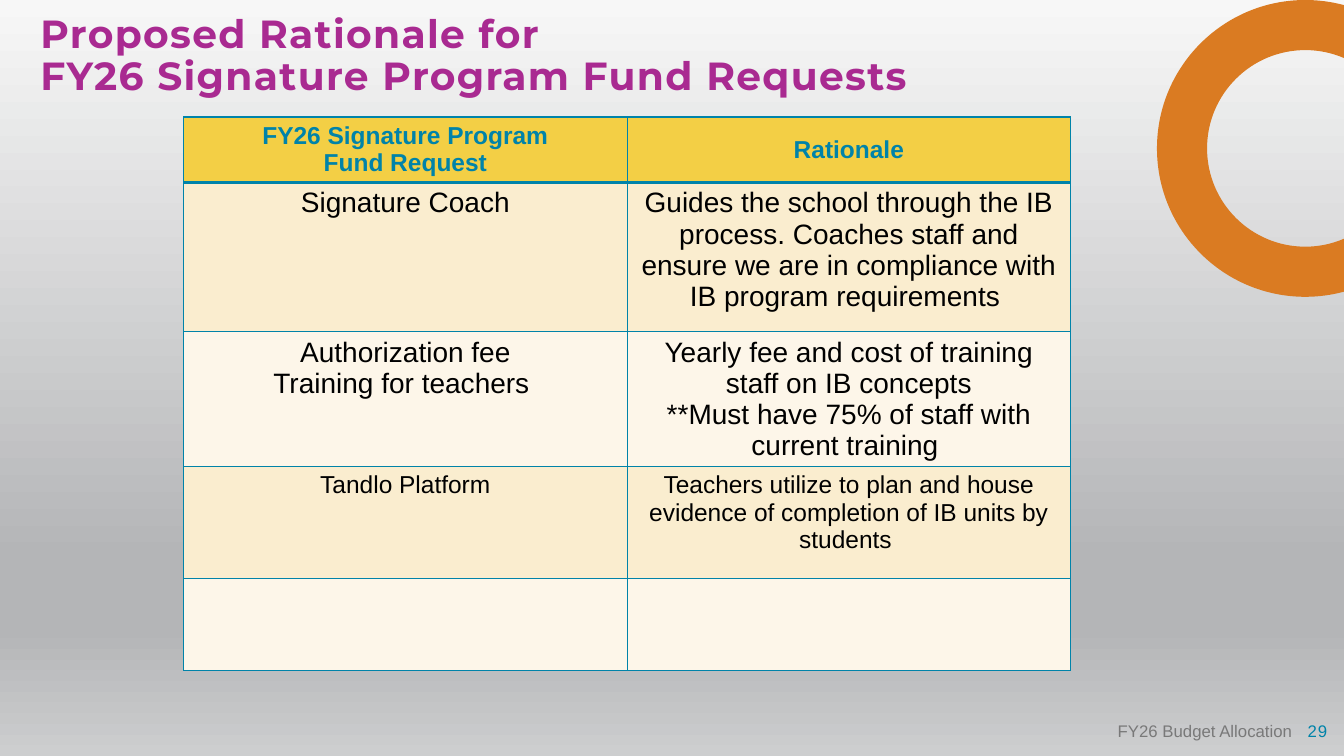
"""Build the signature program fund rationale slide."""
from copy import deepcopy
from dataclasses import dataclass
from math import acos, cos, pi, sin, tan

from lxml.etree import SubElement
from pptx import Presentation
from pptx.dml.color import RGBColor
from pptx.enum.text import MSO_ANCHOR as ANCHOR, MSO_AUTO_SIZE, PP_ALIGN as ALIGN
from pptx.oxml.ns import qn
from pptx.util import Pt


@dataclass(frozen=True)
class Theme:
    """Colours, fonts and type sizes."""
    purple: str = "A92A91"
    teal: str = "0083A9"
    orange: str = "DA7B22"
    gold: str = "F3CF45"
    sand: str = "FAEDCF"
    cream: str = "FDF6E9"
    black: str = "000000"
    gray: str = "797979"
    backdrop: tuple = ((0, "F7F7F7"), (74, "B4B5B7"), (83, "B4B5B7"), (100, "CDCECF"))
    heading: str = "Montserrat"
    body: str = "Arial"
    title_size: float = 28
    large: float = 20
    medium: float = 17.5
    small: float = 12


@dataclass(frozen=True)
class FundRow:
    """One table row: its two cell texts, height and look."""
    request: str
    rationale: str
    height: float
    fill: str
    size: float
    header: bool = False


@dataclass(frozen=True)
class FooterItem:
    """One right-aligned text in the footer."""
    text: str
    left: float
    width: float
    color: str
    inset: float
    spacing: float = 0


@dataclass(frozen=True)
class Ring:
    """Centre and radii of the ring."""
    cx: float = 932.4
    cy: float = 106
    outer: float = 106
    inner: float = 70.2


T = Theme()
WIDTH, HEIGHT = 960, 540
UNITS = 100
ROWS = (
    FundRow("FY26 Signature Program\nFund Request", "Rationale", 46.8, T.gold, T.medium, True),
    FundRow("Signature Coach",
            "Guides the school through the IB process. Coaches staff and ensure we are "
            "in compliance with IB program requirements ", 106.6, T.sand, T.large),
    FundRow("Authorization fee\nTraining for teachers ",
            "Yearly fee and cost of training staff on IB concepts\n"
            "**Must have 75% of staff with current training ", 86.4, T.cream, T.large),
    FundRow("Tandlo Platform",
            "Teachers utilize to plan and house evidence of completion of IB units by students ",
            79.9, T.sand, T.medium),
    FundRow("", "", 65.5, T.cream, T.medium),
)
FOOTER = (
    FooterItem("29", 732, 216, T.teal, 0, 0.5),
    FooterItem("FY26 Budget Allocation", 777, 153.2, T.gray, 7.2),
)


def rgb(color: str) -> RGBColor:
    """Turn a hex string into a colour."""
    return RGBColor.from_string(color)


def write(tf, text: str, *, size: float, color: str, font: str = T.body, bold: bool = False,
          align=ALIGN.LEFT, spacing: float = 0, line: float = 1.0) -> None:
    """Fill a text frame, one paragraph for each line of text."""
    for i, words in enumerate(text.split("\n")):
        p = tf.add_paragraph() if i else tf.paragraphs[0]
        p.text = words
        p.alignment = align
        p.line_spacing = line
        for r in p.runs:
            r.font.size, r.font.bold, r.font.name = Pt(size), bold, font
            r.font.color.rgb = rgb(color)
            if spacing:
                r.font._element.set("spc", str(round(spacing * 100)))
        for br in p._p.findall(qn("a:br")):
            br.insert(0, deepcopy(p.runs[0].font._element))


def set_frame(tf, inset: float, anchor) -> None:
    """Set wrapping, side insets and anchor of a text frame."""
    tf.word_wrap, tf.auto_size, tf.vertical_anchor = True, MSO_AUTO_SIZE.NONE, anchor
    tf.margin_left = tf.margin_right = Pt(inset)
    tf.margin_top = tf.margin_bottom = 0


def paint_background(s) -> None:
    """Give the slide its vertical gradient."""
    fill = s.background.fill
    fill.gradient()
    fill.gradient_angle = 270
    stops = next(s.element.iter(qn("a:gsLst")))
    stops.clear()
    for percent, color in T.backdrop:
        stop = SubElement(stops, qn("a:gs"), pos=str(percent * 1000))
        SubElement(stop, qn("a:srgbClr"), val=color)


def quarter_angles(ring: Ring, radius: float) -> list[float]:
    """List the angles that split an arc at the edge and the axes."""
    start = acos((WIDTH - ring.cx) / radius)
    return [start, pi / 2, pi, 3 * pi / 2, 2 * pi - start]


def add_ring(s, ring: Ring) -> None:
    """Draw the ring cut off by the right edge, with curved sides."""
    nodes = [(ring.outer, a) for a in quarter_angles(ring, ring.outer)]
    nodes += [(ring.inner, a) for a in reversed(quarter_angles(ring, ring.inner))]
    points = [((ring.cx + r * cos(a)) * UNITS, (ring.cy + r * sin(a)) * UNITS) for r, a in nodes]
    builder = s.shapes.build_freeform(*points[0], scale=Pt(1) / UNITS)
    builder.add_line_segments(points[1:], close=True)
    sp = builder.convert_to_shape()
    left, top = (ring.cx - ring.outer) * UNITS, (ring.cy - ring.outer) * UNITS
    lines = list(sp._element.iter(qn("a:lnTo")))
    for ln, (r0, a0), (r1, a1), (x0, y0), (x1, y1) in zip(
            lines, nodes, nodes[1:], points, points[1:]):
        if r0 != r1:
            continue
        pull = 4 / 3 * tan((a1 - a0) / 4) * r0 * UNITS
        controls = ((x0 - pull * sin(a0), y0 + pull * cos(a0)),
                    (x1 + pull * sin(a1), y1 - pull * cos(a1)))
        curve = ln.makeelement(qn("a:cubicBezTo"), {})
        for x, y in controls:
            SubElement(curve, qn("a:pt"), x=str(round(x - left)), y=str(round(y - top)))
        curve.append(deepcopy(ln[0]))
        ln.getparent().replace(ln, curve)
    sp.shadow.inherit = False
    sp.fill.solid()
    sp.fill.fore_color.rgb = rgb(T.orange)
    sp.line.fill.background()


def add_borders(cell, top: float, bottom: float) -> None:
    """Line all four sides of a cell."""
    props = cell._tc.get_or_add_tcPr()
    for i, (side, width) in enumerate((("L", 1), ("R", 1), ("T", top), ("B", bottom))):
        ln = props.makeelement(qn(f"a:ln{side}"), {"w": str(Pt(width))})
        SubElement(SubElement(ln, qn("a:solidFill")), qn("a:srgbClr"), val=T.teal)
        props.insert(i, ln)


def add_fund_table(s) -> None:
    """Draw the table of requests and rationales."""
    total = sum(row.height for row in ROWS)
    table = s.shapes.add_table(len(ROWS), 2, Pt(131.2), Pt(83.5), Pt(633.6), Pt(total)).table
    for i, row in enumerate(ROWS):
        table.rows[i].height = Pt(row.height)
        for j, text in enumerate((row.request, row.rationale)):
            cell = table.cell(i, j)
            cell.fill.solid()
            cell.fill.fore_color.rgb = rgb(row.fill)
            cell.vertical_anchor = ANCHOR.MIDDLE if row.header else ANCHOR.TOP
            write(cell.text_frame, text, size=row.size, bold=row.header, align=ALIGN.CENTER,
                  color=T.teal if row.header else T.black)
            add_borders(cell, top=3 if i == 1 else 1, bottom=3 if row.header else 1)


def add_title(s) -> None:
    """Place and format the title."""
    sp = s.shapes.title
    sp.left, sp.top, sp.width, sp.height = Pt(28.8), Pt(10.5), Pt(814.3), Pt(74.2)
    set_frame(sp.text_frame, 0, ANCHOR.TOP)
    write(sp.text_frame, "Proposed Rationale for \vFY26 Signature Program Fund Requests",
          size=T.title_size, color=T.purple, font=T.heading, bold=True, spacing=1, line=0.9)


def add_footer(s) -> None:
    """Add the page number and footer label."""
    for item in FOOTER:
        sp = s.shapes.add_textbox(Pt(item.left), Pt(507.6), Pt(item.width), Pt(28.8))
        set_frame(sp.text_frame, item.inset, ANCHOR.MIDDLE)
        write(sp.text_frame, item.text, size=T.small, color=item.color, align=ALIGN.RIGHT,
              spacing=item.spacing)


def main() -> None:
    """Build and save the slide."""
    prs = Presentation()
    prs.slide_width, prs.slide_height = Pt(WIDTH), Pt(HEIGHT)
    s = prs.slides.add_slide(prs.slide_layouts[5])
    paint_background(s)
    add_ring(s, Ring())
    add_title(s)
    add_fund_table(s)
    add_footer(s)
    prs.save("out.pptx")


if __name__ == "__main__":
    main()
